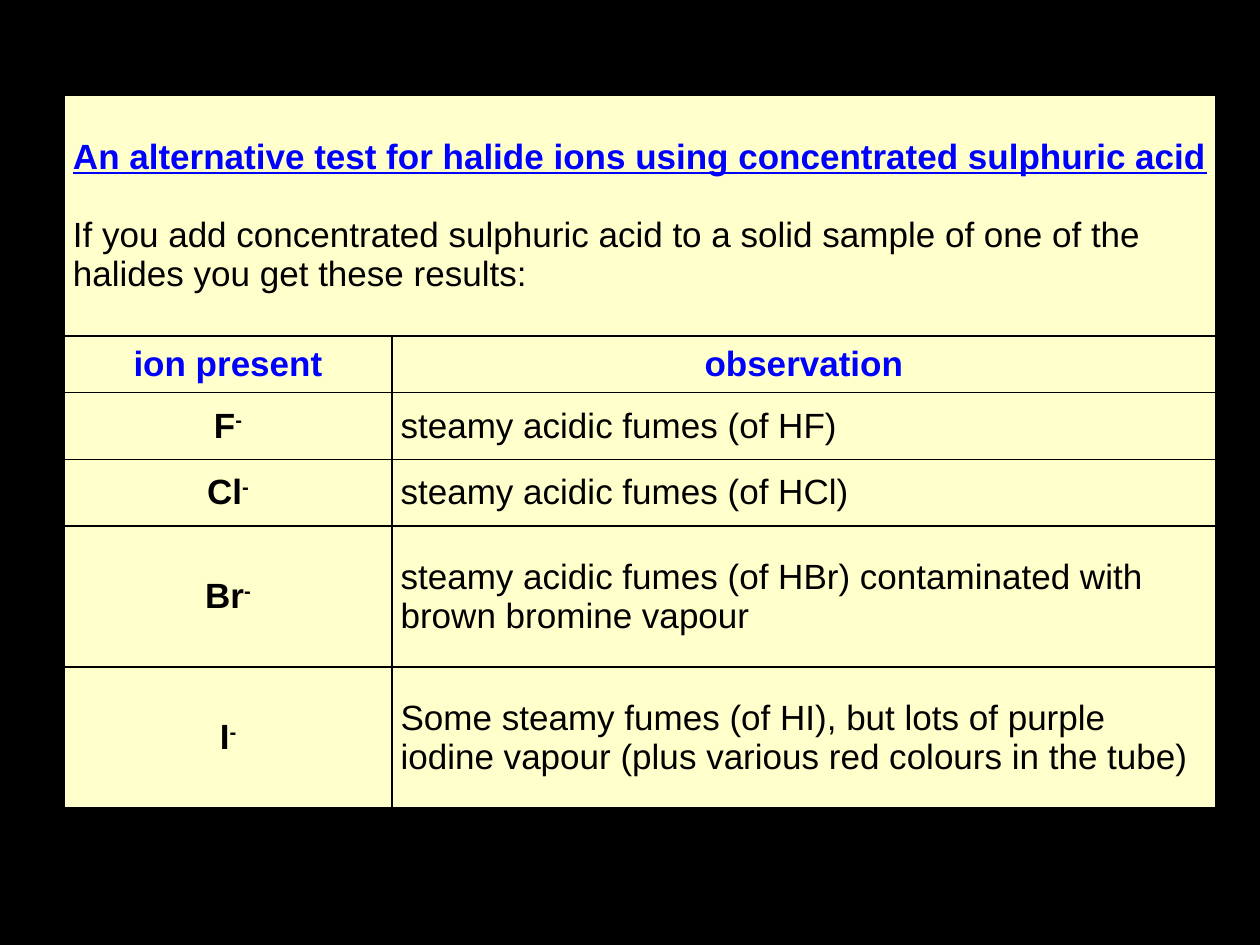
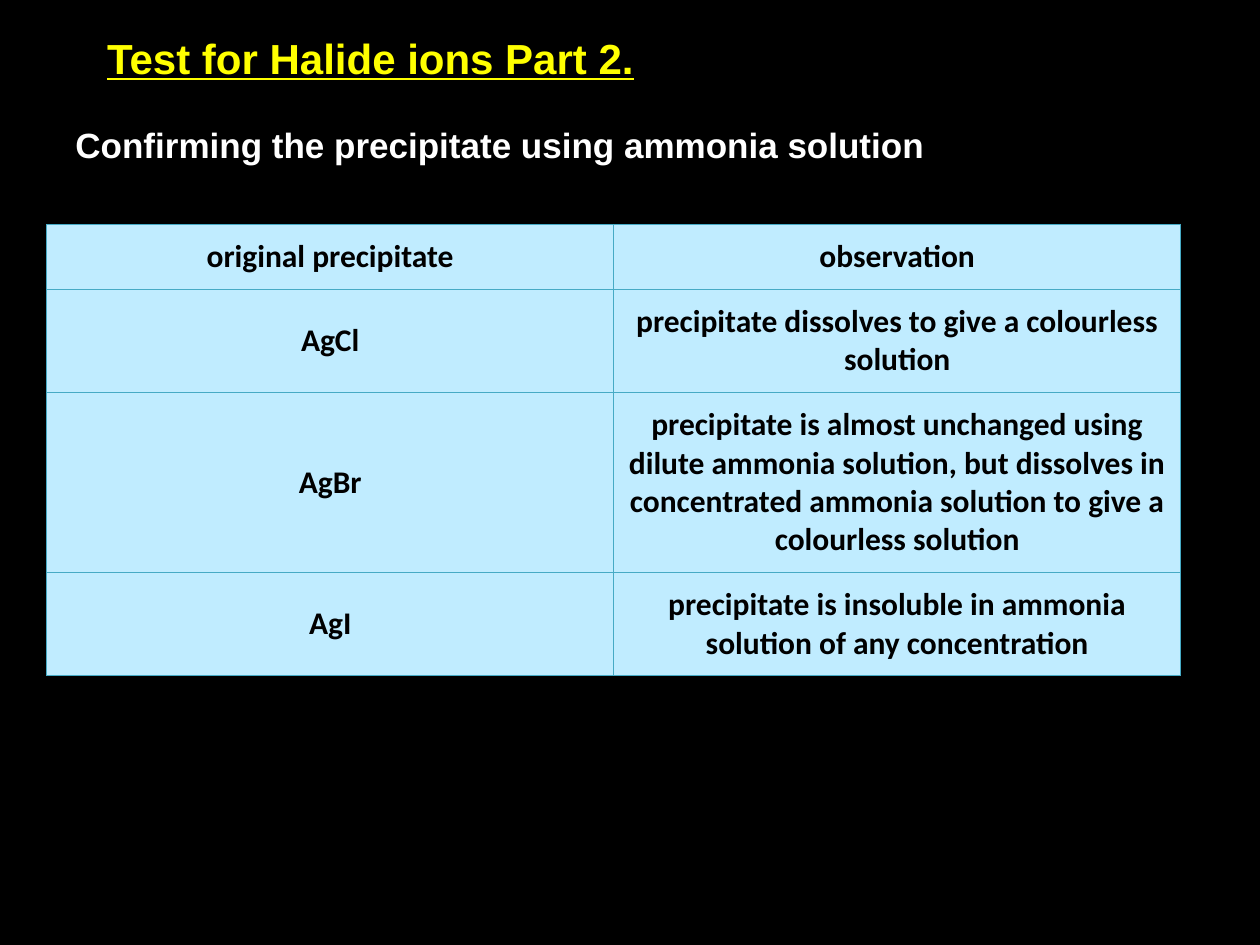
from pptx import Presentation
from pptx.dml.color import RGBColor
from pptx.enum.text import MSO_ANCHOR, PP_ALIGN
from pptx.oxml import parse_xml
from pptx.oxml.ns import nsdecls
from pptx.util import Pt

BLACK = RGBColor(0x00, 0x00, 0x00)
WHITE = RGBColor(0xFF, 0xFF, 0xFF)
BLUE = RGBColor(0x00, 0x00, 0xFF)
YELLOW = RGBColor(0xFF, 0xFF, 0x00)
CREAM = RGBColor(0xFF, 0xFF, 0xCC)
SKY = RGBColor(0xC0, 0xEC, 0xFF)
TEAL = RGBColor(0x46, 0xAA, 0xC5)


def add_run(para, text, size, color, bold=True, line=False, face="Arial"):
    run = para.add_run()
    run.text = text
    font = run.font
    font.name, font.size, font.bold, font.underline = face, Pt(size), bold, line
    font.color.rgb = color
    return run


def add_grid(slide, left, top, cols, rows, pad, fill, edge, width):
    """Add a table with plain filled cells and even borders."""
    grid = slide.shapes.add_table(len(rows), len(cols), Pt(left), Pt(top),
                                  Pt(sum(cols)), Pt(sum(rows))).table
    grid.first_row = grid.horz_banding = False
    for col, size in zip(grid.columns, cols):
        col.width = Pt(size)
    for row, size in zip(grid.rows, rows):
        row.height = Pt(size)
    for cell in grid.iter_cells():
        cell.margin_left = cell.margin_right = Pt(pad)
        cell.margin_top = cell.margin_bottom = Pt(pad)
        cell.vertical_anchor = MSO_ANCHOR.MIDDLE
        props = cell._tc.get_or_add_tcPr()
        for side in "LRTB":
            props.append(parse_xml(
                f'<a:ln{side} {nsdecls("a")} w="{Pt(width)}"><a:solidFill>'
                f'<a:srgbClr val="{edge}"/></a:solidFill></a:ln{side}>'))
        cell.fill.solid()
        cell.fill.fore_color.rgb = fill
    return grid


prs = Presentation()
prs.slide_width, prs.slide_height = Pt(720), Pt(540)

# Shared black background
back = prs.slide_master.background.fill
back.solid()
back.fore_color.rgb = BLACK

# Slide 1: sulphuric acid test
slide = prs.slides.add_slide(prs.slide_layouts[6])
grid = add_grid(slide, 36.7, 54.5, [187.2, 470.9],
                [137.5, 32.3, 38.2, 38.2, 80.6, 80.6, 18.7],
                5, CREAM, BLACK, 1)

# Heading cell across both columns
head = grid.cell(0, 0)
head.merge(grid.cell(0, 1))
head.margin_right = Pt(3)
para = head.text_frame.paragraphs[0]
add_run(para, "An alternative test for halide ions using concentrated "
        "sulphuric acid", 20, BLUE, line=True)
para = head.text_frame.add_paragraph()
para.space_before = Pt(22.3)
add_run(para, "If you add concentrated sulphuric acid to a solid sample of "
        "one of the halides you get these results:", 20, BLACK, bold=False)

# Column heads
for col, text in enumerate(["ion present", "observation"]):
    para = grid.cell(1, col).text_frame.paragraphs[0]
    para.alignment = PP_ALIGN.CENTER
    add_run(para, text, 20, BLUE)

# Ions and what is seen
tests = [
    ("F", "steamy acidic fumes (of HF)"),
    ("Cl", "steamy acidic fumes (of HCl)"),
    ("Br", "steamy acidic fumes (of HBr) contaminated with brown bromine "
           "vapour"),
    ("I", "Some steamy fumes (of HI), but lots of purple iodine vapour "
          "(plus various red colours in the tube)"),
]
for row, (ion, text) in enumerate(tests, 2):
    para = grid.cell(row, 0).text_frame.paragraphs[0]
    para.alignment = PP_ALIGN.CENTER
    add_run(para, ion, 20, BLACK)
    sign = add_run(para, "-", 20, BLACK)
    sign._r.get_or_add_rPr().set("baseline", "30000")
    para = grid.cell(row, 1).text_frame.paragraphs[0]
    add_run(para, text, 20, BLACK, bold=False)

# Clear bottom row
for col in range(2):
    cell = grid.cell(6, col)
    cell.fill.background()
    cell.margin_top = cell.margin_bottom = Pt(0)
    cell.text_frame.paragraphs[0].font.size = Pt(12)

# Slide 2: ammonia test
slide = prs.slides.add_slide(prs.slide_layouts[5])
title = slide.shapes.title
title.left, title.top, title.width, title.height = Pt(54), Pt(15), Pt(318), Pt(36)
frame = title.text_frame
frame.word_wrap = False
frame.vertical_anchor = MSO_ANCHOR.TOP
para = frame.paragraphs[0]
para.alignment = PP_ALIGN.LEFT
add_run(para, "Test for Halide ions Part 2.", 24, YELLOW, line=True)

# Subtitle
box = slide.shapes.add_textbox(Pt(36), Pt(64.8), Pt(641.5), Pt(104.4))
frame = box.text_frame
frame.word_wrap = True
frame.margin_top = Pt(6)
add_run(frame.paragraphs[0], "Confirming the precipitate using ammonia solution",
        20, WHITE)

# Precipitates and what is seen
grid = add_grid(slide, 26.7, 128.2, [324, 324], [37, 59, 103, 59],
                7.2, SKY, TEAL, 0.75)
tests = [
    ("original precipitate", "observation"),
    ("AgCl", "precipitate dissolves to give a colourless solution"),
    ("AgBr", "precipitate is almost unchanged using dilute ammonia solution, "
             "but dissolves in concentrated ammonia solution to give a "
             "colourless solution"),
    ("AgI", "precipitate is insoluble in ammonia solution of any "
            "concentration"),
]
for row, texts in enumerate(tests):
    for col, text in enumerate(texts):
        para = grid.cell(row, col).text_frame.paragraphs[0]
        para.alignment = PP_ALIGN.CENTER
        add_run(para, text, 18, BLACK, face="Calibri")

prs.save("out.pptx")
